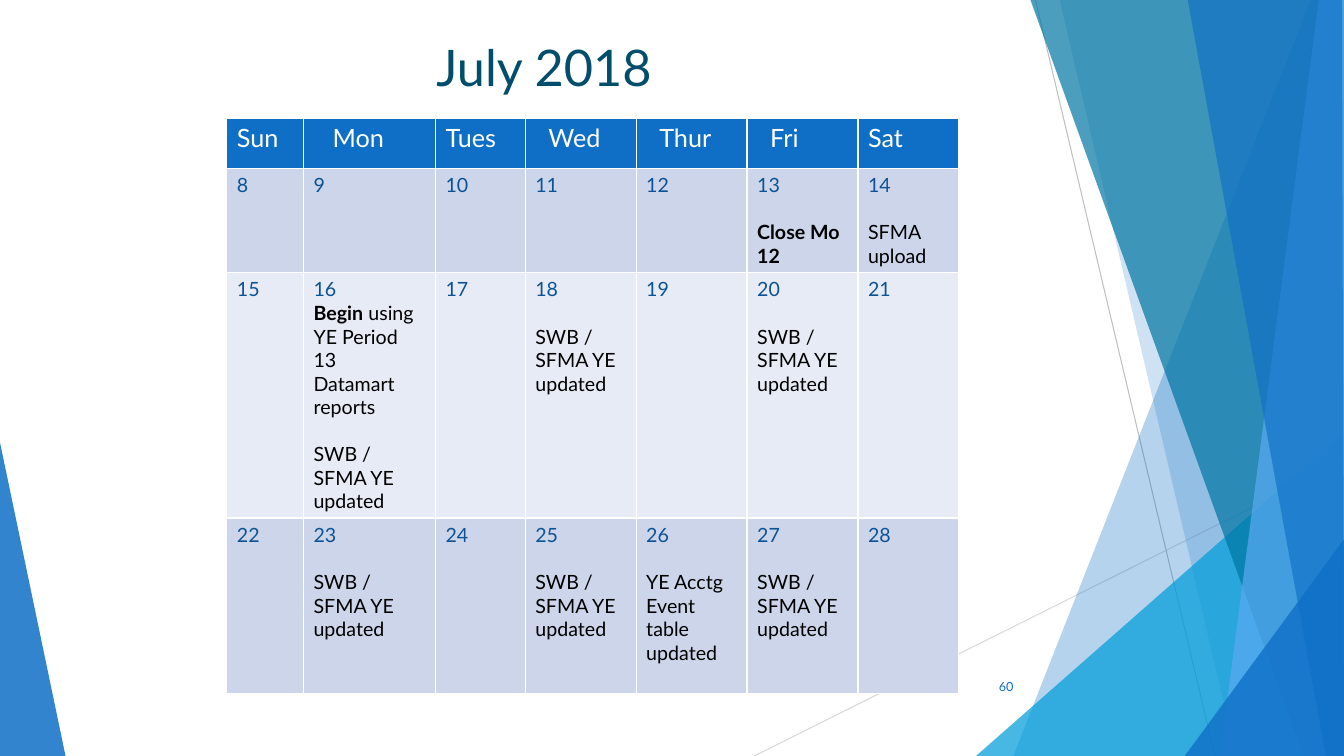
from lxml.etree import SubElement
from pptx import Presentation
from pptx.dml.color import RGBColor
from pptx.enum.shapes import MSO_CONNECTOR
from pptx.enum.text import MSO_ANCHOR, PP_ALIGN
from pptx.oxml.ns import qn
from pptx.util import Inches, Pt

COLORS = {
    "blue": "0F6FC6", "cyan": "009DD9", "teal": "0076A3", "sky": "59AAF2",
    "title": "004E6C", "date": "0B5394", "note": "000000", "white": "FFFFFF",
    "odd_week": "CCD5EA", "even_week": "E7EBF5",
    "pale_line": "D9D9D9", "grey_line": "BFBFBF",
}
FONT = "Lato"
SLIDE_W, SLIDE_H = 13.33, 7.5
BLANK_LINE = 16.8

RAYS = [
    ("pale_line", (7.48, 7.5), (13.33, 4.58)),
    ("grey_line", (10.27, 0), (12.05, 7.5)),
]
FACETS = [
    ("blue", 85, [(0, 4.39), (0.65, 7.5), (0, 7.5)]),
    ("blue", 30, [(13, 0), (10.05, 7.5), (13.33, 7.5), (13.33, 0)]),
    ("blue", 20, [(10.51, 0), (12.26, 7.5), (13.33, 7.5), (13.33, 0)]),
    ("cyan", 72, [(9.68, 7.5), (13.33, 4.29), (13.33, 7.5)]),
    ("teal", 70, [(10.22, 0), (12.93, 7.5), (13.33, 7.5), (13.33, 0)]),
    ("sky", 70, [(13.08, 0), (12.1, 7.5), (13.33, 7.5), (13.33, 0)]),
    ("blue", 65, [(11.78, 0), (13.15, 7.5), (13.33, 7.5), (13.31, 0)]),
    ("blue", 80, [(11.75, 7.5), (13.33, 5.35), (13.33, 7.5)]),
]

WEEKDAYS = [("Sun", 0), ("Mon", 0.19), ("Tues", 0), ("Wed", 0.13),
            ("Thur", 0.13), ("Fri", 0.13), ("Sat", 0)]
DAY_WIDTHS = [0.76, 1.31, 0.89, 1.1, 1.1, 1.1, 1]
WEEK_HEIGHTS = [0.5, 1.03, 2.43, 1.74]
FIRST_DAY, WEEK_COUNT = 8, 3
UPDATED = (BLANK_LINE, "", "SWB / SFMA YE updated")
NOTES = {
    13: [(BLANK_LINE, "Close Mo 12", "")],
    14: [(BLANK_LINE, "", "SFMA upload")],
    16: [(0, "Begin", " using YE Period 13"), (0, "", "Datamart reports"), UPDATED],
    18: [UPDATED],
    20: [UPDATED],
    23: [UPDATED],
    25: [UPDATED],
    26: [(BLANK_LINE, "", "YE Acctg Event table updated")],
    27: [UPDATED],
}


def color(name):
    """Return the named palette colour."""
    return RGBColor.from_string(COLORS[name])


def style(run, size, name, bold=False):
    """Apply the slide font, size, colour and weight to a run."""
    run.font.name, run.font.size, run.font.bold = FONT, Pt(size), bold
    run.font.color.rgb = color(name)


def add_label(slide, box, text, size, name, align, anchor):
    """Place one line of text in the given box."""
    frame = slide.shapes.add_textbox(*map(Inches, box)).text_frame
    frame.word_wrap, frame.vertical_anchor = True, anchor
    frame.text = text
    frame.paragraphs[0].alignment = align
    style(frame.paragraphs[0].runs[0], size, name)


def add_backdrop(slide, left, top):
    """Draw the thin rays and translucent facets from the given corner."""
    def place(point):
        return Inches(left + point[0]), Inches(top + point[1])

    def draw_facet(name, opacity, points):
        start, *others = map(place, points)
        builder = slide.shapes.build_freeform(*start)
        builder.add_line_segments(others, close=True)
        facet = builder.convert_to_shape()
        facet.shadow.inherit = False
        facet.line.fill.background()
        facet.fill.solid()
        facet.fill.fore_color.rgb = color(name)
        tint = facet.fill._xPr.find(".//" + qn("a:srgbClr"))
        SubElement(tint, qn("a:alpha"), val=str(opacity * 1000))

    draw_facet(*FACETS[0])
    for name, start, end in RAYS:
        ray = slide.shapes.add_connector(
            MSO_CONNECTOR.STRAIGHT, *place(start), *place(end))
        ray.line.color.rgb, ray.line.width = color(name), Pt(0.75)
        SubElement(ray._element.spPr, qn("a:effectLst"))
    for facet in FACETS[1:]:
        draw_facet(*facet)


def format_cell(cell, fill):
    """Give a cell white borders and a solid fill."""
    properties = cell._tc.get_or_add_tcPr()
    for side in ("lnL", "lnR", "lnT", "lnB"):
        border = SubElement(properties, qn("a:" + side), w=str(Pt(1)))
        solid = SubElement(border, qn("a:solidFill"))
        SubElement(solid, qn("a:srgbClr"), val=COLORS["white"])
    cell.fill.solid()
    cell.fill.fore_color.rgb = color(fill)


def fill_day(cell, day):
    """Write a date and its notes into a cell."""
    frame = cell.text_frame
    frame.text = str(day)
    style(frame.paragraphs[0].runs[0], 14, "date")
    for gap, strong, plain in NOTES.get(day, []):
        note = frame.add_paragraph()
        note.space_before = Pt(gap)
        for words, bold in ((strong, True), (plain, False)):
            if words:
                run = note.add_run()
                run.text = words
                style(run, 14, "note", bold)


def add_calendar(slide, left, top):
    """Build the calendar table at the given corner."""
    calendar = slide.shapes.add_table(
        WEEK_COUNT + 1, len(WEEKDAYS), Inches(left), Inches(top),
        Inches(sum(DAY_WIDTHS)), Inches(sum(WEEK_HEIGHTS))).table
    for column, width in zip(calendar.columns, DAY_WIDTHS):
        column.width = Inches(width)
    for row, height in zip(calendar.rows, WEEK_HEIGHTS):
        row.height = Inches(height)
    for weekday, (label, indent) in enumerate(WEEKDAYS):
        heading = calendar.cell(0, weekday)
        format_cell(heading, "blue")
        heading.margin_left = Inches(0.1 + indent)
        heading.text_frame.text = label
        style(heading.text_frame.paragraphs[0].runs[0], 18, "white")
        for week in range(WEEK_COUNT):
            cell = calendar.cell(week + 1, weekday)
            format_cell(cell, "even_week" if week % 2 else "odd_week")
            fill_day(cell, FIRST_DAY + week * len(WEEKDAYS) + weekday)


def main():
    """Create the calendar slide and save it."""
    deck = Presentation()
    deck.slide_width, deck.slide_height = Inches(SLIDE_W), Inches(SLIDE_H)
    slide = deck.slides.add_slide(deck.slide_layouts[6])
    add_backdrop(slide, 0, 0)
    add_label(slide, (4.23, 0.31, 6.59, 1), "July 2018", 36, "title",
              PP_ALIGN.LEFT, MSO_ANCHOR.TOP)
    add_calendar(slide, 2.25, 1.17)
    add_label(slide, (9.4, 6.61, 0.75, 0.4), "60", 9, "blue",
              PP_ALIGN.RIGHT, MSO_ANCHOR.MIDDLE)
    deck.save("out.pptx")


if __name__ == "__main__":
    main()
